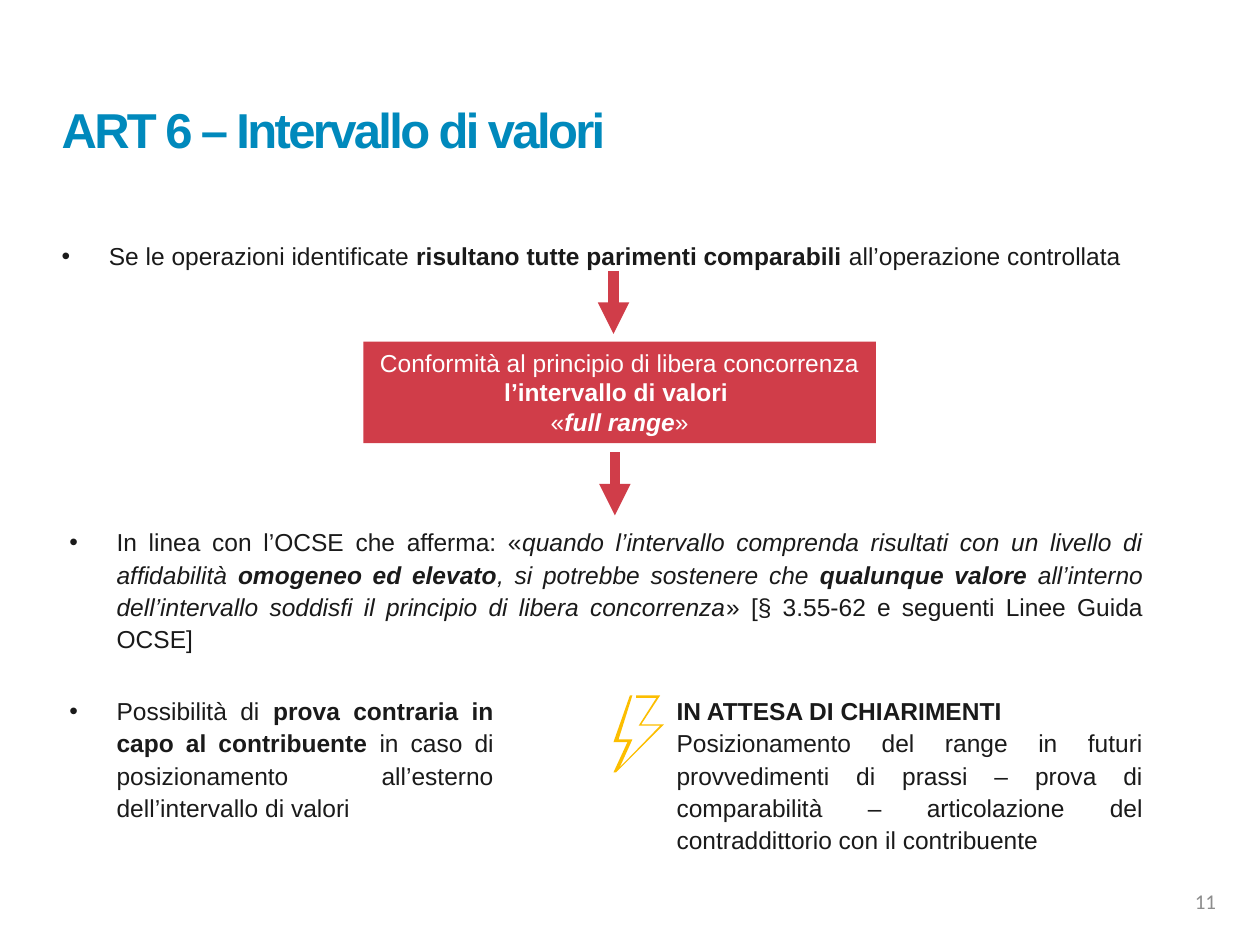
from pptx import Presentation
from pptx.dml.color import RGBColor
from pptx.enum.shapes import MSO_CONNECTOR as Link, MSO_SHAPE as Shape
from pptx.enum.text import MSO_ANCHOR as Anchor, MSO_AUTO_SIZE as Fit, PP_ALIGN as Align
from pptx.oxml.ns import qn
from pptx.util import Pt
from lxml.etree import SubElement

BLUE = RGBColor(0x00, 0x89, 0xBC)
RED = RGBColor(0xD0, 0x3D, 0x49)
GOLD = RGBColor(0xFC, 0xBE, 0x00)
INK = RGBColor(0x1A, 0x1A, 0x1A)
GREY = RGBColor(0x8D, 0x8D, 0x8D)
WHITE = RGBColor(0xFF, 0xFF, 0xFF)

# Content: a paragraph is a list of (text, style), style "b" bold, "i" italic
TITLE = [[("ART 6 – Intervallo di valori", "b")]]
RANGE = [
    [("Conformità al principio di libera concorrenza ", ""),
     ("l’intervallo di valori ", "b")],
    [("«", ""), ("full range", "bi"), ("»", "")],
]
PAGE = [[("11", "")]]

# Body texts: place (left, top, width, height), bulleted, paragraphs
BODIES = [
    ((28, 132.5, 641, 24.5), True, [[
        ("Se le operazioni identificate ", ""),
        ("risultano tutte parimenti comparabili ", "b"),
        ("all’operazione controllata", "")]]),
    ((32.4, 296, 628, 80.6), True, [[
        ("In linea con l’OCSE che afferma: «", ""),
        ("quando l’intervallo comprenda risultati con un livello di affidabilità ", "i"),
        ("omogeneo ed elevato", "bi"),
        (", si potrebbe sostenere che ", "i"),
        ("qualunque valore ", "bi"),
        ("all’interno dell’intervallo soddisfi il principio di libera concorrenza", "i"),
        ("» [§ 3.55-62 e seguenti Linee Guida OCSE]", "")]]),
    ((32.4, 392.4, 257, 80.6), True, [[
        ("Possibilità di ", ""),
        ("prova contraria in capo al contribuente ", "b"),
        ("in caso di posizionamento all’esterno dell’intervallo di valori", "")]]),
    ((379.4, 392.4, 281, 99.4), False, [
        [("IN ATTESA DI CHIARIMENTI ", "b")],
        [("Posizionamento del range in futuri provvedimenti di prassi – prova di "
          "comparabilità – articolazione del contraddittorio con il contribuente ", "")]]),
]

ARROWS = [(350.6, 154.8), (351.4, 258.5)]
DROP = 36
BOLT = [
    (366.5, 414), (379.4, 414), (352.1, 441.4), (350.6, 441.4), (358.6, 424.1),
    (350.6, 424.1), (360, 397.4), (361.4, 397.4), (353.5, 422.6), (361.4, 422.6),
    (354.2, 438.5), (377.3, 414.7), (365, 414.7), (375.1, 398.9), (363.6, 398.9),
    (363.6, 397.4), (377.3, 397.4),
]

# Formats
BASE = {"name": "Arial", "size": Pt(14)}
HEAD = {"name": "Arial", "size": Pt(28)}
FOOT = {"name": "Calibri", "size": Pt(12)}
BODY = {"alignment": Align.JUSTIFY, "line_spacing": 1.1,
        "space_before": Pt(0), "space_after": Pt(0)}


def apply(obj, vals):
    for key, val in vals.items():
        setattr(obj, key, val)


def place(shape, box):
    apply(shape, dict(zip(("left", "top", "width", "height"), map(Pt, box))))


def write(shape, paras, font, color, form, anchor=Anchor.TOP):
    frame = shape.text_frame
    apply(frame, {"word_wrap": True, "auto_size": Fit.NONE,
                  "vertical_anchor": anchor})
    for num, runs in enumerate(paras):
        para = frame.add_paragraph() if num else frame.paragraphs[0]
        apply(para, form)
        for text, style in runs:
            run = para.add_run()
            run.text = text
            apply(run.font, {**font, "bold": "b" in style, "italic": "i" in style})
            run.font.color.rgb = color
    return frame.paragraphs


def mark(para, on):
    props = para._p.get_or_add_pPr()
    gap = Pt(27) if on else 0
    props.set("marL", str(gap))
    props.set("indent", str(-gap))
    if on:
        SubElement(props, qn("a:buFont")).set("typeface", "Arial")
        SubElement(props, qn("a:buChar")).set("char", "•")
    else:
        SubElement(props, qn("a:buNone"))


def paint(shape, color):
    shape.shadow.inherit = False
    shape.fill.solid()
    shape.fill.fore_color.rgb = color
    shape.line.fill.background()


deck = Presentation()
deck.slide_width, deck.slide_height = Pt(720), Pt(540)
slide = deck.slides.add_slide(deck.slide_layouts[4])
shapes = slide.shapes

# Title
title = shapes.title
place(title, (28, 39.6, 514, 74.2))
head = write(title, TITLE, HEAD, BLUE,
             {"alignment": Align.LEFT, "line_spacing": 0.8}, Anchor.MIDDLE)
head[0].runs[0].font._element.set("spc", "-150")

# Body texts
holders = [item for item in slide.placeholders if item.placeholder_format.idx]
for holder, (box, dot, paras) in zip(holders, BODIES):
    place(holder, box)
    for para in write(holder, paras, BASE, INK, BODY):
        mark(para, dot)

# Red box
panel = shapes.add_shape(Shape.RECTANGLE, *map(Pt, (207.6, 195.3, 293, 58)))
paint(panel, RED)
write(panel, RANGE, BASE, WHITE, {"alignment": Align.CENTER})

# Arrows
for x, y in ARROWS:
    arrow = shapes.add_connector(Link.STRAIGHT, Pt(x), Pt(y), Pt(x), Pt(y + DROP))
    arrow.line.width = Pt(6)
    arrow.line.color.rgb = RED
    SubElement(arrow.line._get_or_add_ln(), qn("a:tailEnd")).set("type", "triangle")
    SubElement(arrow._element.spPr, qn("a:effectLst"))

# Lightning bolt
spots = [(Pt(x), Pt(y)) for x, y in BOLT]
pen = shapes.build_freeform(*spots[0])
pen.add_line_segments(spots[1:], close=True)
paint(pen.convert_to_shape(), GOLD)

# Page number
page = shapes.add_textbox(*map(Pt, (534, 500.5, 168, 28.8)))
write(page, PAGE, FOOT, GREY, {"alignment": Align.RIGHT}, Anchor.MIDDLE)

deck.save("out.pptx")
